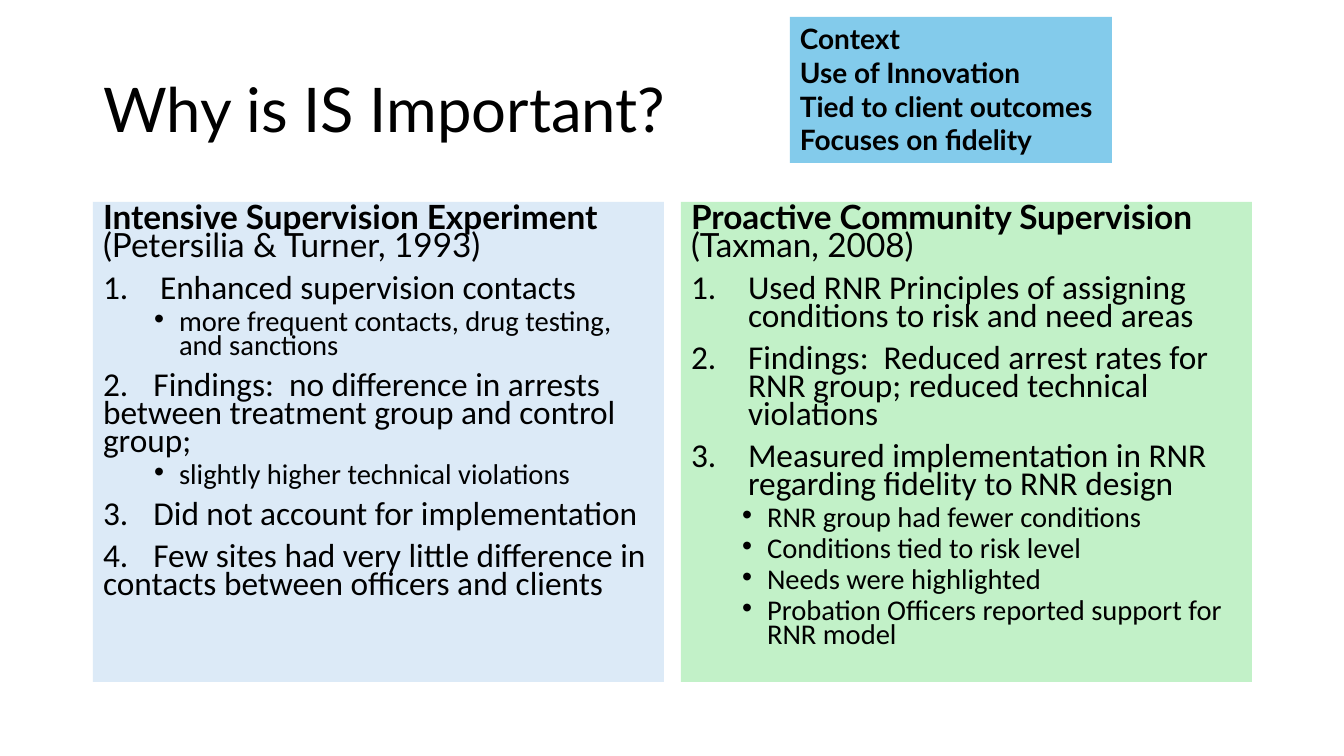
from lxml.etree import SubElement
from pptx import Presentation
from pptx.dml.color import RGBColor
from pptx.enum.text import MSO_ANCHOR, MSO_AUTO_SIZE, PP_ALIGN
from pptx.oxml.ns import qn
from pptx.util import Emu, Pt

THEME = {
    "ink": "000000", "blue": "DCEAF7", "green": "C2F1C8", "sky": "83CBEB",
    "head_font": "Lato", "list_font": "Calibri",
    "title": 44, "item": 23.8, "sub": 20.4, "context": 20,
}


def px(count):
    return Emu(round(count * 914400 / 100.8))


def add_span(para, text, size, font, bold=False):
    span = para.add_run()
    span.text = text
    look = {"name": THEME[font], "size": Pt(THEME[size]), "bold": bold}
    for name, value in look.items():
        setattr(span.font, name, value)
    span.font.color.rgb = RGBColor.from_string(THEME["ink"])


# Paragraph kinds: margin and indent in px, list level, space before, type size
KINDS = {
    "head": (0, 0, 0, 10, "item"),
    "plain": (0, 0, 0, 10, "item"),
    "number": (57, -57, 0, 10, "item"),
    "bullet": (76, -25, 1, 5, "sub"),
}
MARKS = {
    "number": ("+mj-lt", "a:buAutoNum", {"type": "arabicPeriod"}),
    "bullet": ("Arial", "a:buChar", {"char": "•"}),
}

# Each row: kind, text, and a citation or a tab stop in px where needed
COLUMNS = [
    ("blue", [
        ("head", "Intensive Supervision Experiment ", "(Petersilia & Turner, 1993)"),
        ("number", "Enhanced supervision contacts", None),
        ("bullet", "more frequent contacts, drug testing, and sanctions", None),
        ("plain", "2.\tFindings:  no difference in arrests between treatment "
                  "group and control group;", 63),
        ("bullet", "slightly higher technical violations", None),
        ("plain", "3.\tDid not account for implementation", 40),
        ("plain", "4.\tFew sites had very little difference in contacts between "
                  "officers and clients", 40),
    ]),
    ("green", [
        ("head", "Proactive Community Supervision ", "(Taxman, 2008)"),
        ("number", "Used RNR Principles of assigning conditions to risk and need areas", None),
        ("number", "Findings:  Reduced arrest rates for RNR group; reduced "
                   "technical violations", None),
        ("number", "Measured implementation in RNR regarding fidelity to RNR design", None),
        ("bullet", "RNR group had fewer conditions", None),
        ("bullet", "Conditions tied to risk level", None),
        ("bullet", "Needs were highlighted", None),
        ("bullet", "Probation Officers reported support for RNR model", None),
    ]),
]
CONTEXT = ["Context", "Use of Innovation", "Tied to client outcomes", "Focuses on fidelity"]

deck = Presentation()
deck.slide_width, deck.slide_height = px(1344), px(756)
page = deck.slides.add_slide(deck.slide_layouts[3])
title, *bodies = page.placeholders
context = page.shapes.add_textbox(0, 0, 0, 0)

# Places and text frames
places = [(93, 40, 1159, 146), (93, 202, 571, 480), (681, 202, 571, 480), (790, 17, 322, 146)]
for box, place in zip([title, *bodies, context], places):
    box.left, box.top, box.width, box.height = map(px, place)
    frame_look = {"word_wrap": True, "auto_size": MSO_AUTO_SIZE.NONE,
                  "vertical_anchor": MSO_ANCHOR.MIDDLE if box is title else MSO_ANCHOR.TOP}
    for name, value in frame_look.items():
        setattr(box.text_frame, name, value)

# Title
para = title.text_frame.paragraphs[0]
para.alignment, para.line_spacing = PP_ALIGN.LEFT, 0.9
add_span(para, "Why is IS Important?", "title", "head_font")

# Two study columns
for box, (colour, rows) in zip(bodies, COLUMNS):
    box.fill.solid()
    box.fill.fore_color.rgb = RGBColor.from_string(THEME[colour])
    for index, (kind, text, extra) in enumerate(rows):
        frame = box.text_frame
        para = frame.add_paragraph() if index else frame.paragraphs[0]
        margin, indent, level, before, size = KINDS[kind]
        para_look = {"level": level, "line_spacing": 0.7, "space_before": Pt(before),
                     "space_after": Pt(0), "alignment": PP_ALIGN.LEFT}
        for name, value in para_look.items():
            setattr(para, name, value)
        add_span(para, text, size, "head_font" if kind == "head" else "list_font",
                 kind == "head")

        # Indents, list marks and tab stops
        props = para._p.get_or_add_pPr()
        props.set("marL", str(px(margin)))
        props.set("indent", str(px(indent)))
        if kind in MARKS:
            face, tag, attributes = MARKS[kind]
            SubElement(props, qn("a:buFont"), typeface=face)
            SubElement(props, qn(tag), attributes)
        else:
            SubElement(props, qn("a:buNone"))
        if kind == "head":
            add_span(para, extra, size, "head_font")
        elif extra:
            stops = SubElement(props, qn("a:tabLst"))
            SubElement(stops, qn("a:tab"), pos=str(px(extra)), algn="l")

# Context box
context.fill.solid()
context.fill.fore_color.rgb = RGBColor.from_string(THEME["sky"])
for index, line in enumerate(CONTEXT):
    frame = context.text_frame
    para = frame.add_paragraph() if index else frame.paragraphs[0]
    add_span(para, line, "context", "head_font", True)

deck.save("out.pptx")
